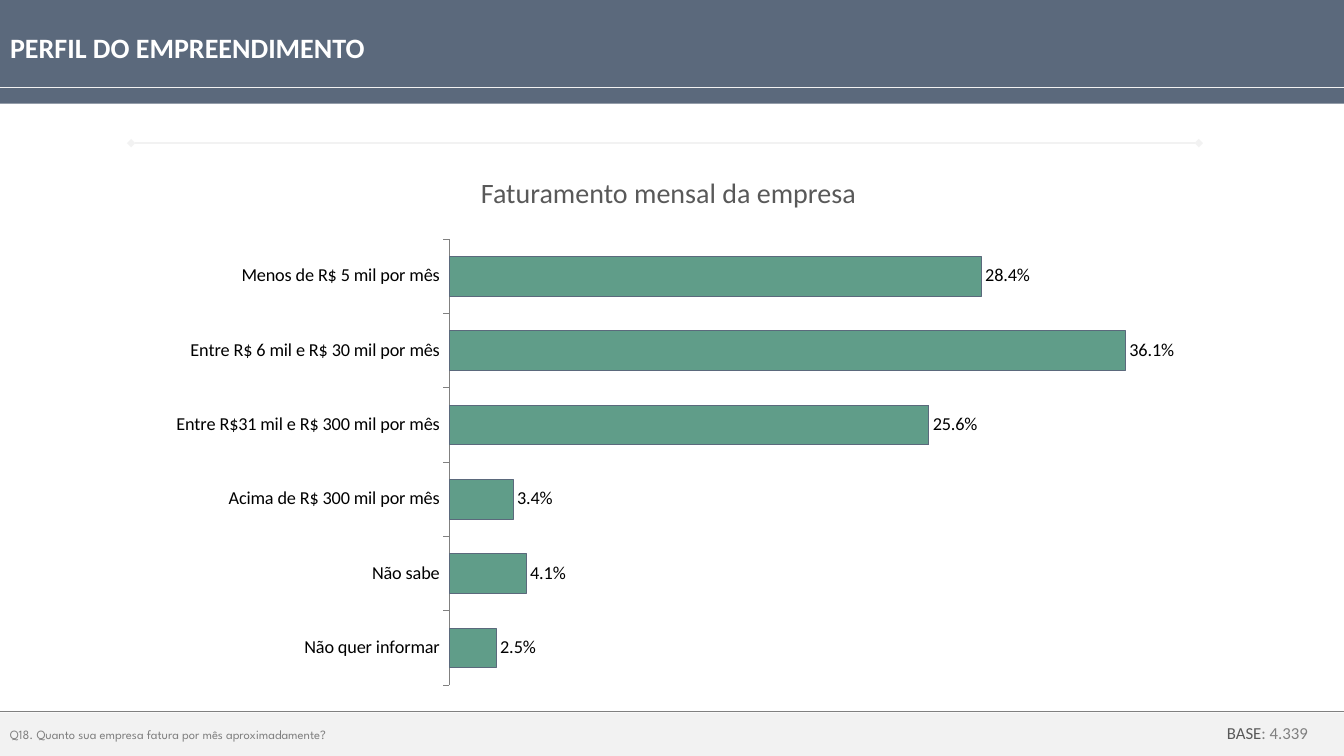
from lxml.etree import SubElement
from pptx import Presentation
from pptx.chart.data import CategoryChartData
from pptx.dml.color import RGBColor
from pptx.enum.chart import XL_CHART_TYPE, XL_LABEL_POSITION, XL_TICK_MARK
from pptx.enum.shapes import MSO_CONNECTOR, MSO_SHAPE
from pptx.enum.text import MSO_ANCHOR, PP_ALIGN
from pptx.oxml.ns import qn
from pptx.util import Inches, Pt


def color(value):
    return RGBColor.from_string(value)


def write(shape, runs, size, font="Calibri", bold=False, align=PP_ALIGN.LEFT):
    frame = shape.text_frame
    frame.word_wrap = True
    frame.vertical_anchor = MSO_ANCHOR.MIDDLE
    paragraph = frame.paragraphs[0]
    paragraph.alignment = align
    for text, run_color in runs:
        run = paragraph.add_run()
        run.text = text
        run.font.size = Pt(size)
        run.font.name = font
        run.font.bold = bold
        run.font.color.rgb = color(run_color)


presentation = Presentation()
presentation.slide_width = Inches(13.33)
presentation.slide_height = Inches(7.5)
width = presentation.slide_width
slide = presentation.slides.add_slide(presentation.slide_layouts[5])
shapes = slide.shapes

bands = []
for top, height, fill in ((0, 1.03, "5B697C"), (7.07, 0.43, "F2F2F2")):
    band = shapes.add_shape(MSO_SHAPE.RECTANGLE, 0, Inches(top), width, Inches(height))
    band.shadow.inherit = False
    band.fill.solid()
    band.fill.fore_color.rgb = color(fill)
    band.line.fill.background()
    bands.append(band)
header, footer = bands
write(footer, [("Q18. Quanto sua empresa fatura por mês aproximadamente?", "808080")], 9, "League Spartan")

title = shapes.title
title.left, title.top, title.width, title.height = 0, Inches(0.25), width, Inches(0.44)
write(title, [("PERFIL DO EMPREENDIMENTO", "FFFFFF")], 20, bold=True)
header.element.addnext(title.element)

rules = (
    (0, 13.33, 0.87, "F2F2F2", 1, False),
    (1.3, 11.89, 1.42, "F2F2F2", 1, True),
    (0, 13.33, 7.06, "808080", 0.5, False),
)
for start, end, top, line_color, weight, diamonds in rules:
    rule = shapes.add_connector(MSO_CONNECTOR.STRAIGHT, Inches(start), Inches(top), Inches(end), Inches(top))
    rule.line.color.rgb = color(line_color)
    rule.line.width = Pt(weight)
    if diamonds:
        for tag in ("a:headEnd", "a:tailEnd"):
            SubElement(rule.line._get_or_add_ln(), qn(tag), type="diamond")
    SubElement(rule.element.spPr, qn("a:effectLst"))

base = shapes.add_textbox(Inches(12.07), Inches(7.12), Inches(1.26), Inches(0.3))
write(base, [("BASE", "595959"), (": 4.339", "808080")], 12)

chart_data = CategoryChartData(number_format="0.0%")
revenue_shares = {
    "Menos de R$ 5 mil por mês": 0.284,
    "Entre R$ 6 mil e R$ 30 mil por mês": 0.361,
    "Entre R$31 mil e R$ 300 mil por mês": 0.256,
    "Acima de R$ 300 mil por mês": 0.034,
    "Não sabe": 0.041,
    "Não quer informar": 0.025,
}
chart_data.categories = list(revenue_shares)
chart_data.add_series("Faturamento", list(revenue_shares.values()))
chart = shapes.add_chart(
    XL_CHART_TYPE.BAR_CLUSTERED, Inches(1.54), Inches(2.28), Inches(10.57), Inches(4.61), chart_data
).chart
chart.has_title = False
chart.has_legend = False
chart.font.name = "Calibri"
chart.font.size = Pt(18)
chart.font.color.rgb = color("000000")

category_axis = chart.category_axis
category_axis.reverse_order = True
category_axis.major_tick_mark = XL_TICK_MARK.OUTSIDE
category_axis.tick_labels.font.size = Pt(13)
category_axis.format.line.color.rgb = color("808080")
value_axis = chart.value_axis
value_axis.minimum_scale = 0
value_axis.maximum_scale = 0.4
value_axis.has_major_gridlines = False
value_axis.visible = False

plot = chart.plots[0]
plot.gap_width = 87
plot.vary_by_categories = False
plot.has_data_labels = True
labels = plot.data_labels
labels.show_value = True
labels.number_format = "0.0%"
labels.number_format_is_linked = False
labels.position = XL_LABEL_POSITION.OUTSIDE_END
labels.font.size = Pt(13)
bars = plot.series[0].format
bars.fill.solid()
bars.fill.fore_color.rgb = color("609D89")
bars.line.color.rgb = color("5B697C")
bars.line.width = Pt(0.75)

plot_area = chart.element.chart.plotArea
for old_layout in plot_area.findall(qn("c:layout")):
    plot_area.remove(old_layout)
layout = SubElement(plot_area, qn("c:layout"))
plot_area.insert(0, layout)
manual_layout = SubElement(layout, qn("c:manualLayout"))
for tag, value in (
    ("layoutTarget", "inner"), ("xMode", "edge"), ("yMode", "edge"),
    ("x", "0.276"), ("y", "0.02"), ("w", "0.703"), ("h", "0.96"),
):
    SubElement(manual_layout, qn(f"c:{tag}"), val=value)

chart_heading = shapes.add_textbox(Inches(0.43), Inches(1.69), Inches(12.4), Inches(0.44))
write(chart_heading, [("Faturamento mensal da empresa", "595959")], 20, align=PP_ALIGN.CENTER)

presentation.save("out.pptx")
